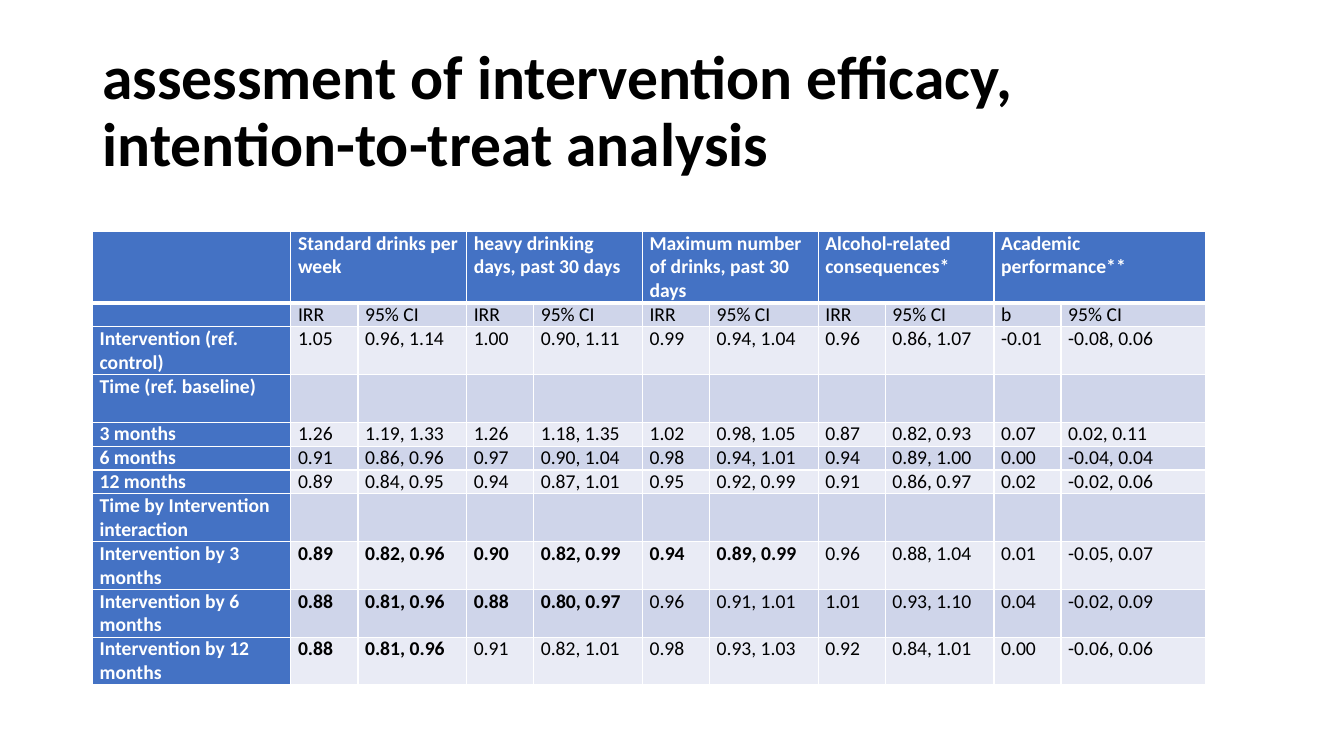
from lxml import etree
from pptx import Presentation
from pptx.dml.color import RGBColor
from pptx.enum.text import MSO_ANCHOR, PP_ALIGN
from pptx.oxml.ns import qn
from pptx.util import Cm, Pt

BLACK = RGBColor(0x00, 0x00, 0x00)
WHITE = RGBColor(0xFF, 0xFF, 0xFF)
BLUE = RGBColor(0x44, 0x72, 0xC4)
BAND_DARK = RGBColor(0xCF, 0xD5, 0xEA)
BAND_LIGHT = RGBColor(0xE9, 0xEB, 0xF5)
FONT = "Calibri"
TEXT_SIZE = Pt(14)
LINE_HEIGHT = 0.6

TITLE = "assessment of intervention efficacy, intention-to-treat analysis"
OUTCOMES = ["Standard drinks per week", "heavy drinking days, past 30 days",
            "Maximum number of drinks, past 30 days",
            "Alcohol-related consequences*", "Academic performance**"]
COLUMN_WIDTHS = [5.0] + [1.69, 2.74] * 4 + [1.69, 3.63]

# Row label, lines of text, number of leading values in bold, values
ROWS = [
    ("", 1, 0, ["IRR", "95% CI"] * 4 + ["b", "95% CI"]),
    ("Intervention (ref. control)", 2, 0,
     ["1.05", "0.96, 1.14", "1.00", "0.90, 1.11", "0.99", "0.94, 1.04",
      "0.96", "0.86, 1.07", "-0.01", "-0.08, 0.06"]),
    ("Time (ref. baseline)", 2, 0, [""] * 10),
    ("3 months", 1, 0,
     ["1.26", "1.19, 1.33", "1.26", "1.18, 1.35", "1.02", "0.98, 1.05",
      "0.87", "0.82, 0.93", "0.07", "0.02, 0.11"]),
    ("6 months", 1, 0,
     ["0.91", "0.86, 0.96", "0.97", "0.90, 1.04", "0.98", "0.94, 1.01",
      "0.94", "0.89, 1.00", "0.00", "-0.04, 0.04"]),
    ("12 months", 1, 0,
     ["0.89", "0.84, 0.95", "0.94", "0.87, 1.01", "0.95", "0.92, 0.99",
      "0.91", "0.86, 0.97", "0.02", "-0.02, 0.06"]),
    ("Time by Intervention interaction", 2, 0, [""] * 10),
    ("Intervention by 3 months", 2, 6,
     ["0.89", "0.82, 0.96", "0.90", "0.82, 0.99", "0.94", "0.89, 0.99",
      "0.96", "0.88, 1.04", "0.01", "-0.05, 0.07"]),
    ("Intervention by 6 months", 2, 4,
     ["0.88", "0.81, 0.96", "0.88", "0.80, 0.97", "0.96", "0.91, 1.01",
      "1.01", "0.93, 1.10", "0.04", "-0.02, 0.09"]),
    ("Intervention by 12 months", 2, 2,
     ["0.88", "0.81, 0.96", "0.91", "0.82, 1.01", "0.98", "0.93, 1.03",
      "0.92", "0.84, 1.01", "0.00", "-0.06, 0.06"]),
]


def set_borders(cell, top=1, bottom=1):
    tcPr = cell._tc.get_or_add_tcPr()
    for side, width in (("L", 1), ("R", 1), ("T", top), ("B", bottom)):
        ln = etree.SubElement(tcPr, qn(f"a:ln{side}"), w=str(Pt(width)))
        fill = etree.SubElement(ln, qn("a:solidFill"))
        etree.SubElement(fill, qn("a:srgbClr"), val=str(WHITE))


def fill_cell(cell, text, fill, color, bold, top=1, bottom=1):
    set_borders(cell, top, bottom)
    cell.fill.solid()
    cell.fill.fore_color.rgb = fill
    cell.margin_left = cell.margin_right = Cm(0.18)
    cell.margin_top = cell.margin_bottom = 0
    p = cell.text_frame.paragraphs[0]
    if not text:
        # An empty cell keeps the row low through its end mark
        etree.SubElement(p._p, qn("a:endParaRPr"), sz=str(int(TEXT_SIZE.pt * 100)))
        return
    p.text = text
    font = p.runs[0].font
    font.name, font.size, font.bold = FONT, TEXT_SIZE, bold
    font.color.rgb = color


def add_title(slide, left, top, width, height):
    sp = slide.shapes.title
    sp.left, sp.top, sp.width, sp.height = left, top, width, height
    tf = sp.text_frame
    tf.text = TITLE
    tf.word_wrap = True
    tf.vertical_anchor = MSO_ANCHOR.MIDDLE
    p = tf.paragraphs[0]
    p.alignment = PP_ALIGN.LEFT
    p.line_spacing = 0.9
    font = p.runs[0].font
    font.name, font.size, font.bold = FONT, Pt(44), True
    font.color.rgb = BLACK


def add_results_table(slide, left, top, width, height):
    table = slide.shapes.add_table(len(ROWS) + 1, len(COLUMN_WIDTHS),
                                   left, top, width, height).table
    for column, column_width in zip(table.columns, COLUMN_WIDTHS):
        column.width = Cm(column_width)

    # Header: one outcome over each pair of columns
    table.rows[0].height = Cm(3 * LINE_HEIGHT)
    for c in range(len(COLUMN_WIDTHS)):
        text = OUTCOMES[c // 2] if c % 2 else ""
        fill_cell(table.cell(0, c), text, BLUE, WHITE, True, bottom=3)
    for c in range(1, len(COLUMN_WIDTHS), 2):
        table.cell(0, c).merge(table.cell(0, c + 1))

    # Body: label column and banded values
    for r, (label, lines, bold_count, values) in enumerate(ROWS, start=1):
        table.rows[r].height = Cm(lines * LINE_HEIGHT)
        top_border = 3 if r == 1 else 1
        fill_cell(table.cell(r, 0), label, BLUE, WHITE, True, top_border)
        band = BAND_DARK if r % 2 else BAND_LIGHT
        for c, value in enumerate(values, start=1):
            fill_cell(table.cell(r, c), value, band, BLACK,
                      c <= bold_count, top_border)


def main():
    prs = Presentation()
    prs.slide_width, prs.slide_height = Cm(33.87), Cm(19.05)
    slide = prs.slides.add_slide(prs.slide_layouts[5])
    add_title(slide, Cm(2.33), Cm(1.01), Cm(29.21), Cm(3.68))
    add_results_table(slide, Cm(2.33), Cm(5.83), Cm(28.04), Cm(11.4))
    prs.save("out.pptx")


if __name__ == "__main__":
    main()
